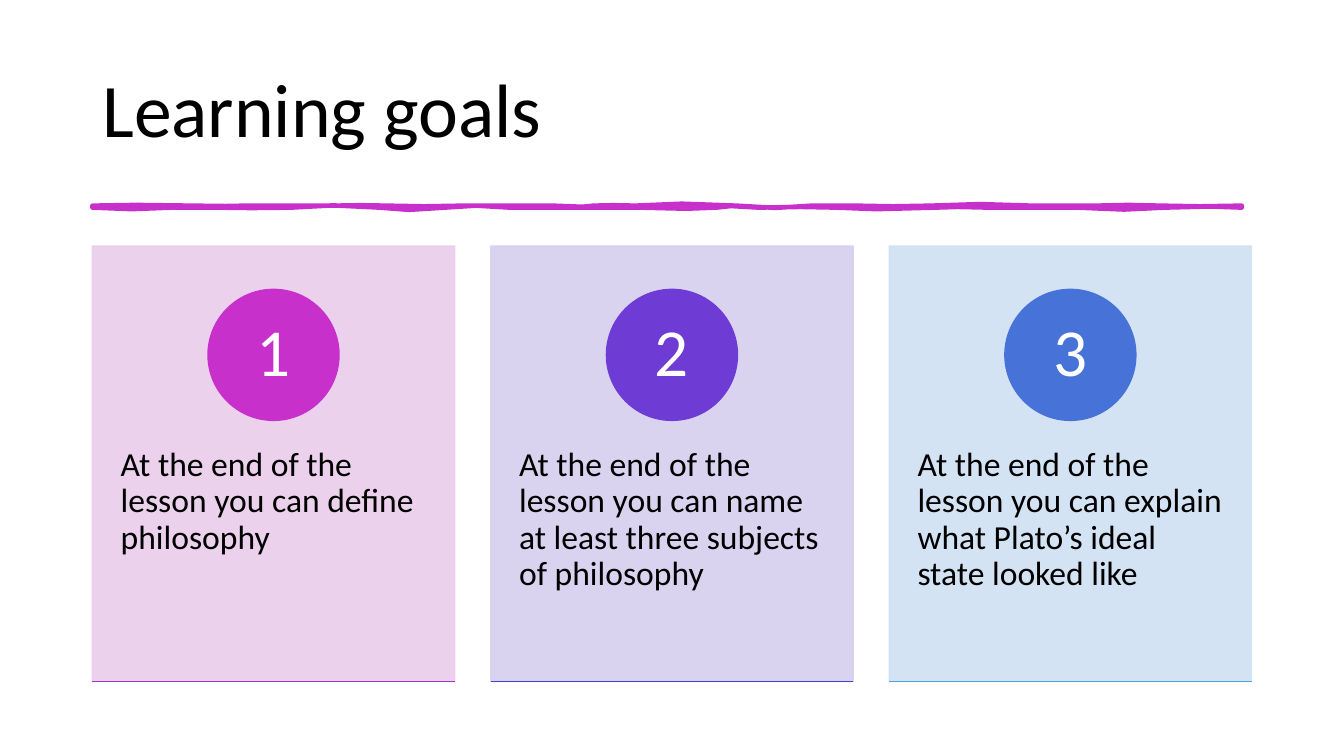
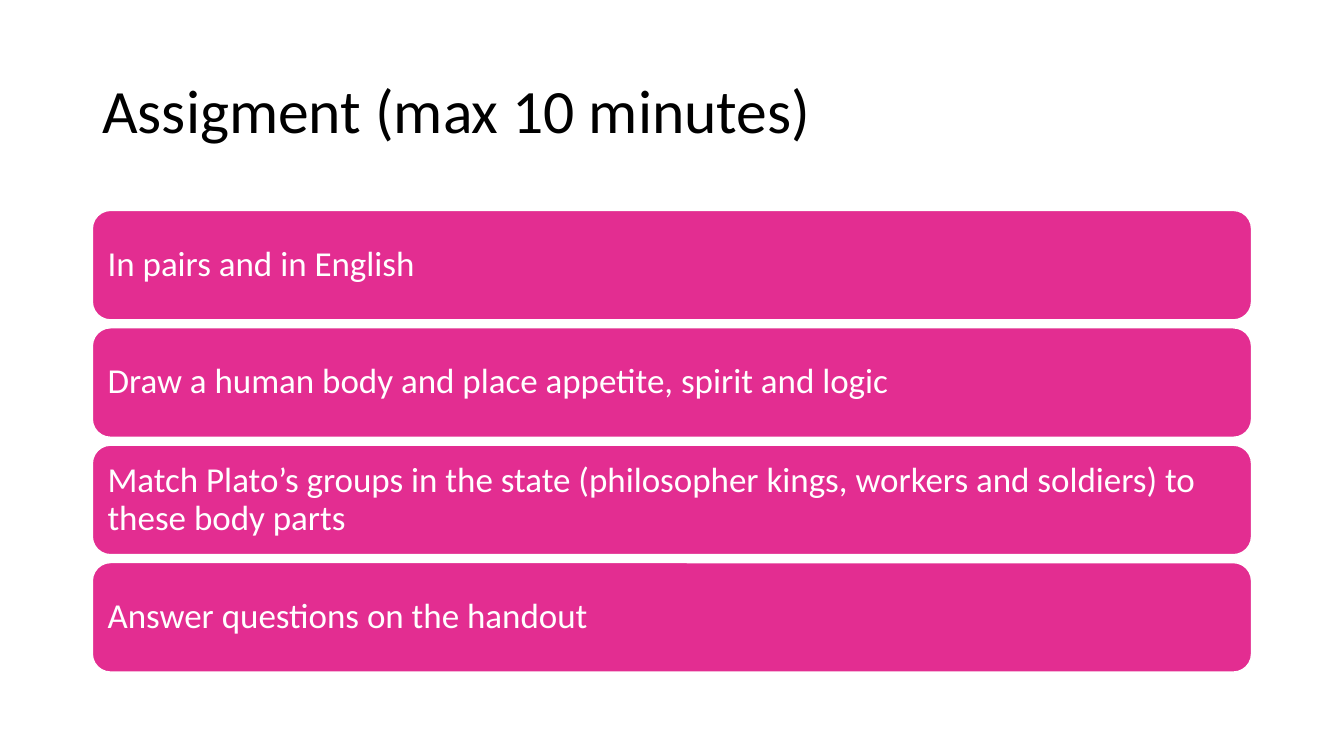
import pptx
import pptx.util
import pptx.dml.color
import pptx.enum.shapes
import pptx.enum.text
import pptx.oxml.ns
from lxml import etree

Pt = pptx.util.Pt
SHAPE = pptx.enum.shapes.MSO_SHAPE
ALIGN = pptx.enum.text.PP_ALIGN
ANCHOR = pptx.enum.text.MSO_ANCHOR
qn = pptx.oxml.ns.qn

FONT = "Calibri"
COLORS = {"ink": "000000", "paper": "FFFFFF", "bar": "E32D91", "stroke": "C830CC"}
LEFT, WIDTH = 66, 828

GOALS_TITLE = "Learning goals"
GOALS = [
    ("At the end of the lesson you can define philosophy",
     {"card": "EBCDEC", "badge": "C830CC", "edge": "9B34D1"}),
    ("At the end of the lesson you can name at least three subjects of philosophy",
     {"card": "D6CFEF", "badge": "6E3BD4", "edge": "4441D7"}),
    ("At the end of the lesson you can explain what Plato’s ideal state looked like",
     {"card": "D0E1F2", "badge": "4773D9", "edge": "4EA6DC"}),
]
TASKS_TITLE = "Assigment (max 10 minutes)"
TASKS = [
    "In pairs and in English",
    "Draw a human body and place appetite, spirit and logic",
    "Match Plato’s groups in the state (philosopher kings, workers and soldiers) "
    "to these body parts",
    "Answer questions on the handout",
]

STROKE_TOP, STROKE_BOTTOM = 146.9, 148.3
UPPER_WAVE = [
    (66, 0), (97, -0.5), (137, 0), (161, 0.3), (176, 0), (238, 0), (258, -0.3),
    (276, 0), (303, 0.5), (331, 0), (395, 0), (416, 0.8), (424, 0), (438, -0.3),
    (454, 0), (487, -1.4), (526, 0), (554, 1.6), (580, 0), (611, 0), (638, 0.5),
    (665, 0), (700, -1.1), (737, 0), (783, 0), (806, -0.5), (829, 0), (857, 0.5),
    (887, 0),
]
LOWER_WAVE = [
    (887, 0), (864, -0.8), (832, 0), (803, 1.4), (769, 0), (706, 0), (684, -0.5),
    (668, 0), (626, 1.1), (597, 0), (572, -0.5), (542, 0), (522, -1.1), (512, 0),
    (490, 0.8), (457, 0), (410, 0), (364, 0), (340, -1.4), (318, 0), (292, 1.6),
    (271, 0), (238, -1.6), (208, 0), (180, 0.3), (153, 0), (123, 0), (94, 1.1),
    (66, 0),
]


def rgb(value):
    return pptx.dml.color.RGBColor.from_string(value)


def write(shape, text, *, size, color=COLORS["ink"], align=ALIGN.LEFT,
          anchor=ANCHOR.MIDDLE, insets=(7.2, 3.6, 7.2, 3.6)):
    frame = shape.text_frame
    frame.word_wrap = True
    frame.vertical_anchor = anchor
    frame.margin_left, frame.margin_top, frame.margin_right, frame.margin_bottom = map(Pt, insets)
    paragraph = frame.paragraphs[0]
    paragraph.text = text
    paragraph.alignment = align
    paragraph.line_spacing = 0.9
    paragraph.font.name = FONT
    paragraph.font.size = Pt(size)
    paragraph.font.color.rgb = rgb(color)


def paint(shape, fill, line, weight=1, opacity=None):
    shape.shadow.inherit = False
    shape.fill.solid()
    shape.fill.fore_color.rgb = rgb(fill)
    shape.line.color.rgb = rgb(line)
    shape.line.width = Pt(weight)
    if opacity:
        for color in shape._element.spPr.iter(qn("a:srgbClr")):
            etree.SubElement(color, qn("a:alpha"), val=str(opacity * 1000))


def add_block(slide, kind, left, top, width, height, fill, line, opacity=None):
    block = slide.shapes.add_shape(kind, Pt(left), Pt(top), Pt(width), Pt(height))
    paint(block, fill, line, opacity=opacity)
    return block


def add_slide(deck, title, size):
    slide = deck.slides.add_slide(deck.slide_layouts[6])
    heading = slide.shapes.add_textbox(Pt(LEFT), Pt(28.8), Pt(WIDTH), Pt(104.4))
    write(heading, title, size=size)
    return slide


def add_brush_stroke(slide):
    outline = [(Pt(x), Pt(STROKE_TOP + dy)) for x, dy in UPPER_WAVE]
    outline += [(Pt(x), Pt(STROKE_BOTTOM + dy)) for x, dy in LOWER_WAVE]
    builder = slide.shapes.build_freeform(*outline[0])
    builder.add_line_segments(outline[1:], close=True)
    stroke = builder.convert_to_shape()
    paint(stroke, COLORS["stroke"], COLORS["stroke"], weight=3.25)
    etree.SubElement(stroke._element.spPr.find(qn("a:ln")), qn("a:round"))


def add_edge(slide, left, right, y, color):
    edge = slide.shapes.add_connector(
        pptx.enum.shapes.MSO_CONNECTOR.STRAIGHT, Pt(left), Pt(y), Pt(right), Pt(y))
    edge.line.color.rgb = rgb(color)
    edge.line.width = Pt(1)
    etree.SubElement(edge._element.spPr, qn("a:effectLst"))


def build_goals(deck):
    slide = add_slide(deck, GOALS_TITLE, 54)
    add_brush_stroke(slide)
    top, height, gap, badge_size = 175.7, 311, 25.8, 93.6
    width = (WIDTH - gap * (len(GOALS) - 1)) / len(GOALS)
    for index, (goal, colors) in enumerate(GOALS):
        left = LEFT + index * (width + gap)
        card = add_block(slide, SHAPE.RECTANGLE, left, top, width, height,
                         colors["card"], colors["card"], opacity=90)
        write(card, goal, size=24, anchor=ANCHOR.TOP, insets=(20.2, 144, 20.2, 26))
        badge = add_block(slide, SHAPE.OVAL, left + (width - badge_size) / 2, top + 31,
                          badge_size, badge_size, colors["badge"], colors["badge"])
        write(badge, str(index + 1), size=48, color=COLORS["paper"],
              align=ALIGN.CENTER, insets=(7.2, 0.9, 7.2, 0.9))
        add_edge(slide, left, left + width, top + height, colors["edge"])


def build_tasks(deck):
    slide = add_slide(deck, TASKS_TITLE, 44)
    top, height, pitch = 150.3, 78.2, 83.85
    for index, task in enumerate(TASKS):
        bar = add_block(slide, SHAPE.ROUNDED_RECTANGLE, LEFT, top + index * pitch,
                        WIDTH, height, COLORS["bar"], COLORS["paper"])
        write(bar, task, size=25, color=COLORS["paper"], insets=(7.2,) * 4)


def main():
    deck = pptx.Presentation()
    deck.slide_width, deck.slide_height = Pt(960), Pt(540)
    build_goals(deck)
    build_tasks(deck)
    deck.save("out.pptx")


if __name__ == "__main__":
    main()
